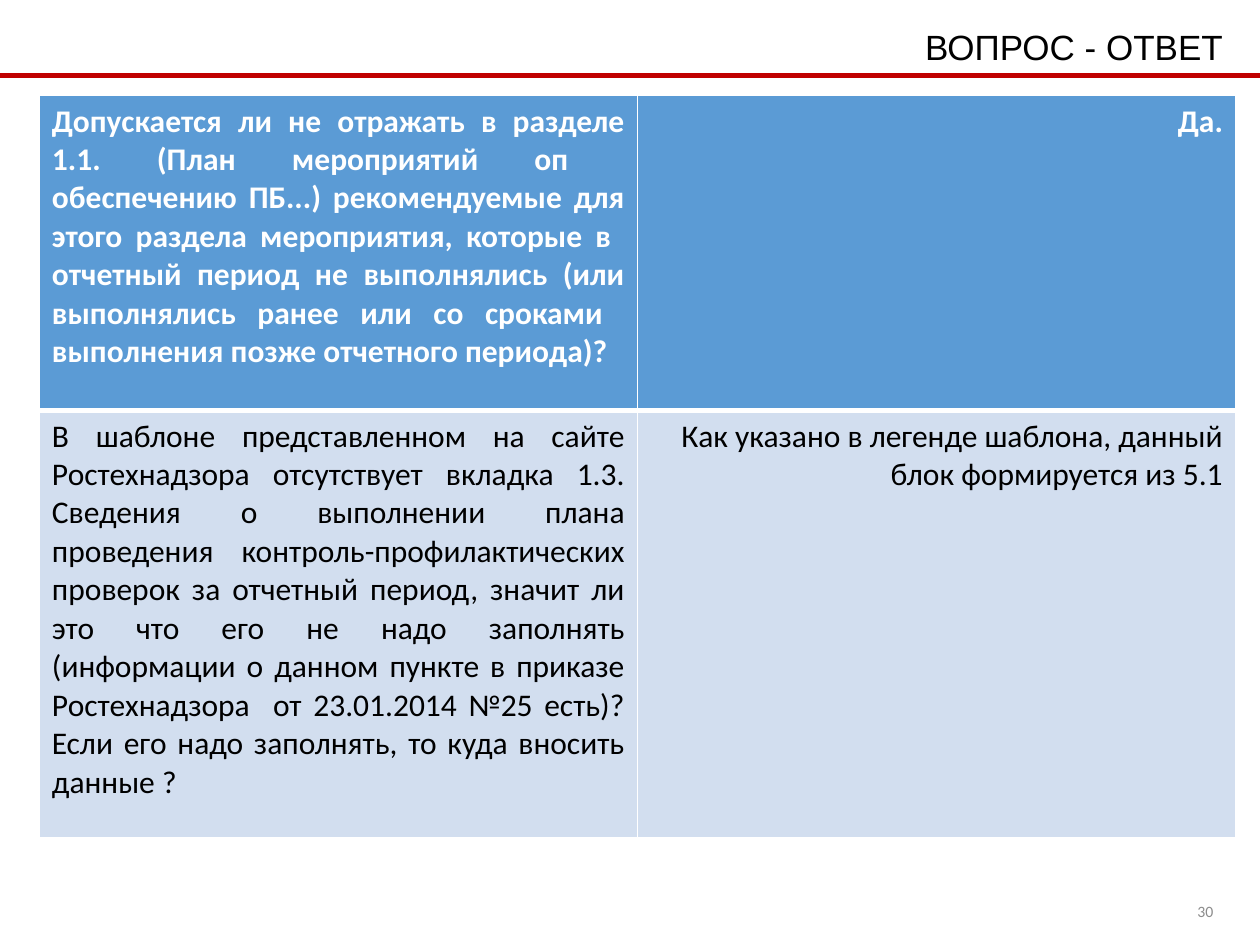
from lxml.etree import SubElement
from pptx import Presentation
from pptx.dml.color import RGBColor
from pptx.enum.shapes import MSO_CONNECTOR as Connector
from pptx.enum.text import MSO_ANCHOR as Anchor, MSO_AUTO_SIZE as AutoSize, PP_ALIGN as Align
from pptx.oxml.ns import qn
from pptx.util import Pt

COLORS = {
    "rule": "C00000",
    "question": "5B9BD5",
    "band": "D2DEEF",
    "white": "FFFFFF",
    "black": "000000",
    "number": "8C8C8C",
}

QUESTIONS = [
    (
        "Допускается ли не отражать в разделе 1.1. (План мероприятий оп \v"
        "обеспечению ПБ...) рекомендуемые для этого раздела мероприятия, которые в \v"
        "отчетный период не выполнялись (или выполнялись ранее или со сроками \v"
        "выполнения позже отчетного периода)?",
        "Да.",
    ),
    (
        "В шаблоне представленном на сайте Ростехнадзора отсутствует вкладка 1.3. "
        "Сведения о выполнении плана проведения контроль-профилактических проверок "
        "за отчетный период, значит ли это что его не надо заполнять (информации о "
        "данном пункте в приказе Ростехнадзора  от 23.01.2014 №25 есть)? Если его "
        "надо заполнять, то куда вносить данные\u00a0?".replace("\u00a0", " "),
        "Как указано в легенде шаблона, данный блок формируется из 5.1",
    ),
]


def rgb(name):
    return RGBColor.from_string(COLORS[name])


def write(frame, text, size=18, font="Calibri", color="black", bold=False, align=Align.RIGHT):
    frame.word_wrap = True
    paragraph = frame.paragraphs[0]
    paragraph.text = text
    paragraph.alignment = align
    for run in paragraph.runs:
        run.font.size = Pt(size)
        run.font.name = font
        run.font.bold = bold
        run.font.color.rgb = rgb(color)


def add_border(cell, side, width):
    line = SubElement(cell._tc.get_or_add_tcPr(), qn(f"a:ln{side}"), w=str(Pt(width)))
    fill = SubElement(line, qn("a:solidFill"))
    SubElement(fill, qn("a:srgbClr"), val=COLORS["white"])


def add_header(slide, left, top, width, height):
    heading = slide.shapes.title
    heading.left, heading.top = Pt(left + 14.4), Pt(top)
    heading.width, heading.height = Pt(width - 28.3), Pt(height)
    heading.text_frame.auto_size = AutoSize.NONE
    heading.text_frame.vertical_anchor = Anchor.TOP
    write(heading.text_frame, "ВОПРОС - ОТВЕТ", size=20, font="Arial")

    rule_y = Pt(top + height + 0.7)
    rule = slide.shapes.add_connector(
        Connector.STRAIGHT, Pt(left), rule_y, Pt(left + width), rule_y)
    rule.line.color.rgb = rgb("rule")
    rule.line.width = Pt(3)
    SubElement(rule._element.spPr, qn("a:effectLst"))


def add_answers(slide, left, top, width, row_heights):
    answers = slide.shapes.add_table(
        len(QUESTIONS), 2, Pt(left), Pt(top), Pt(width), Pt(sum(row_heights))).table
    answers.first_row = answers.horz_banding = False
    for row, height in zip(answers.rows, row_heights):
        row.height = Pt(height)
    for r, pair in enumerate(QUESTIONS):
        first = r == 0
        for c, text in enumerate(pair):
            cell = answers.cell(r, c)
            for side in "LRTB":
                seam = side == ("B" if first else "T")
                add_border(cell, side, 3 if seam else 1)
            cell.fill.solid()
            cell.fill.fore_color.rgb = rgb("question" if first else "band")
            write(cell.text_frame, text, bold=first,
                  color="white" if first else "black",
                  align=Align.RIGHT if c else Align.JUSTIFY)


def add_page_number(slide, left, top, width, height):
    number = slide.shapes.add_textbox(Pt(left), Pt(top), Pt(width), Pt(height))
    number.text_frame.vertical_anchor = Anchor.MIDDLE
    write(number.text_frame, "30", size=9, color="number")


def main():
    deck = Presentation()
    deck.slide_width, deck.slide_height = Pt(720), Pt(540)
    slide = deck.slides.add_slide(deck.slide_layouts[5])
    add_header(slide, 0, 10.8, 720, 31.7)
    add_answers(slide, 22.5, 54.7, 683.5, [180, 244])
    add_page_number(slide, 640, 509.8, 60.5, 21.6)
    deck.save("out.pptx")


if __name__ == "__main__":
    main()
